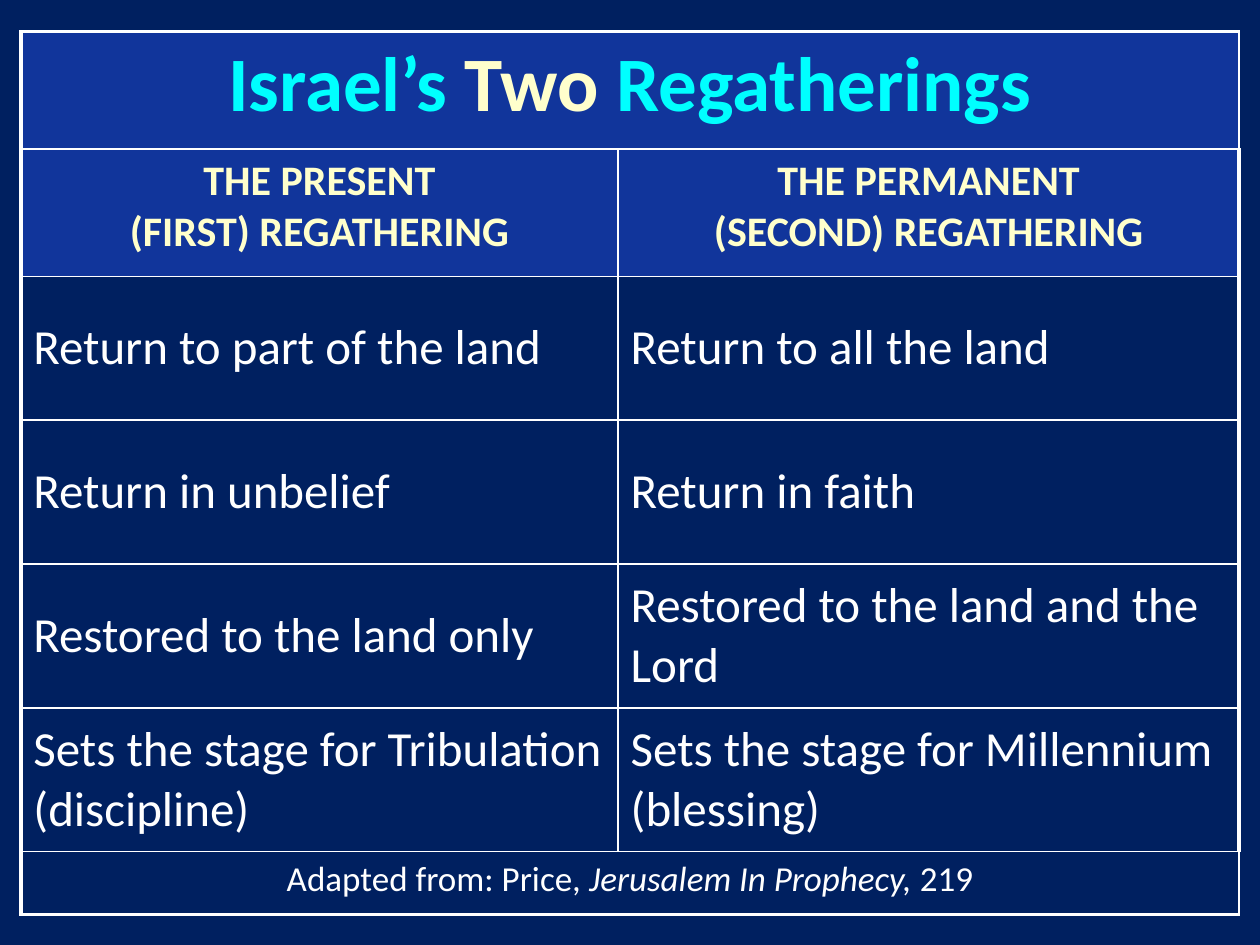
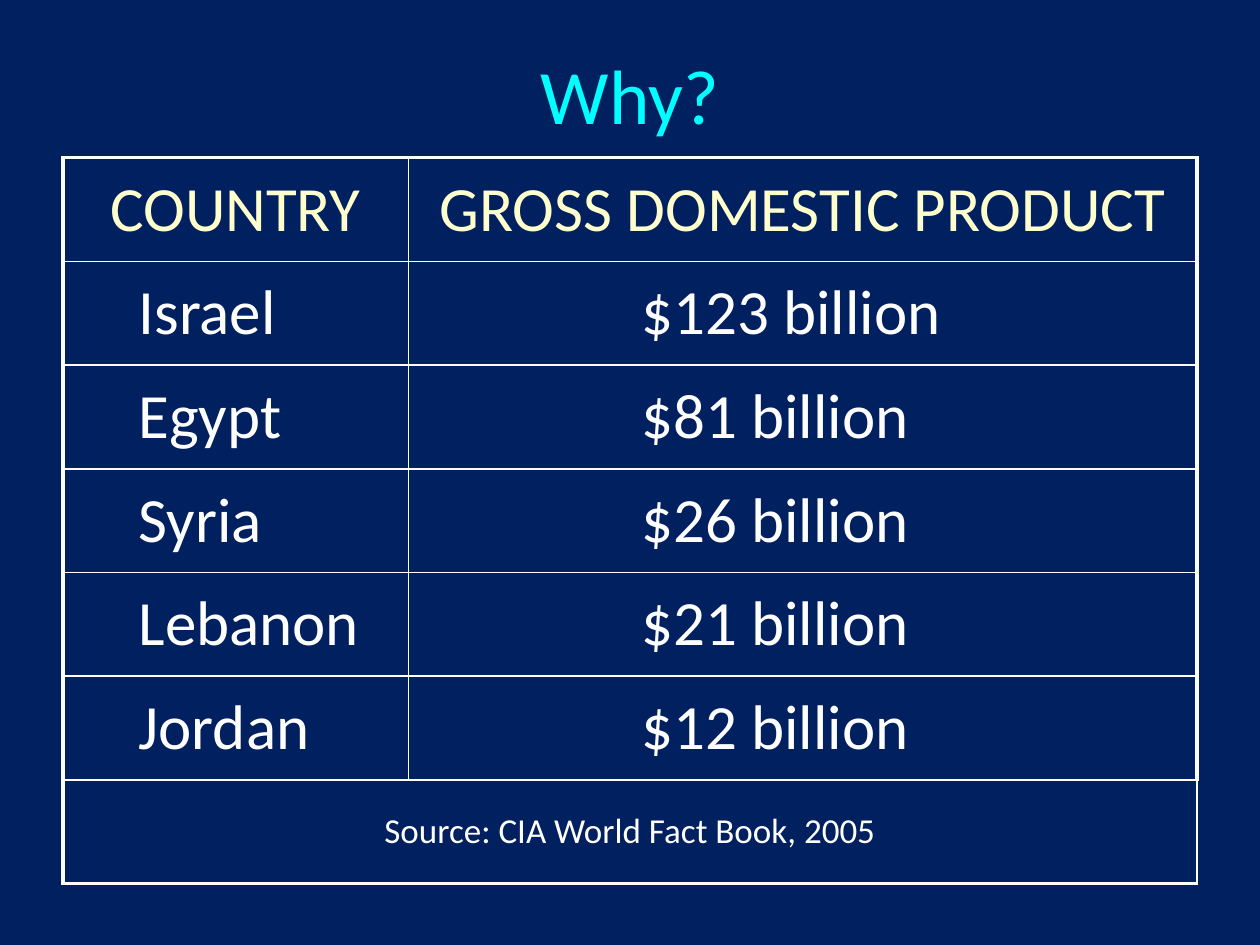
from lxml.etree import SubElement
from pptx import Presentation
from pptx.dml.color import RGBColor
from pptx.enum.text import MSO_ANCHOR, PP_ALIGN
from pptx.oxml.ns import qn
from pptx.util import Cm, Pt

NAVY = RGBColor(0x00, 0x20, 0x60)
BLUE = RGBColor(0x11, 0x35, 0x9B)
AQUA = RGBColor(0x00, 0xFF, 0xFF)
CREAM = RGBColor(0xFF, 0xFF, 0xCC)
WHITE = RGBColor(0xFF, 0xFF, 0xFF)
FONT = "Calibri"
TITLE_SIZE, SOURCE_SIZE = 44, 20
OUTER_LINE, INNER_LINE = Pt(2.25), Pt(1)
TITLE_ONLY_LAYOUT, BLANK_LAYOUT = 5, 6

REGATHERINGS = [
    ("Return to part of the land", "Return to all the land"),
    ("Return in unbelief", "Return in faith"),
    ("Restored to the land only", "Restored to the land and the Lord"),
    ("Sets the stage for Tribulation (discipline)",
     "Sets the stage for Millennium (blessing)"),
]
PRODUCTS = [
    ("Israel", "$123 billion"),
    ("Egypt", "$81 billion"),
    ("Syria", "$26 billion"),
    ("Lebanon", "$21 billion"),
    ("Jordan", "$12 billion"),
]


def style_span(span, size, color, bold=False, italic=False):
    font = span.font
    font.name, font.size = FONT, Pt(size)
    font.bold, font.italic = bold, italic
    font.color.rgb = color


def draw_borders(table):
    last_row, last_column = len(table.rows) - 1, len(table.columns) - 1
    for row in range(last_row + 1):
        for column in range(last_column + 1):
            properties = table.cell(row, column)._tc.get_or_add_tcPr()
            edges = {"a:lnL": column == 0, "a:lnR": column == last_column,
                     "a:lnT": row == 0, "a:lnB": row == last_row}
            for edge, is_outer in edges.items():
                width = OUTER_LINE if is_outer else INNER_LINE
                line = SubElement(properties, qn(edge), w=str(int(width)))
                fill = SubElement(line, qn("a:solidFill"))
                SubElement(fill, qn("a:srgbClr"), val=str(WHITE))


def add_grid(page, left, top, widths, heights, merged_rows):
    table = page.shapes.add_table(len(heights), len(widths), Cm(left), Cm(top),
                                  Cm(sum(widths)), Cm(sum(heights))).table
    table.first_row = table.horz_banding = False
    for column, width in zip(table.columns, widths):
        column.width = Cm(width)
    for row, height in zip(table.rows, heights):
        row.height = Cm(height)
    draw_borders(table)
    for cell in table.iter_cells():
        cell.fill.background()
    for row in merged_rows:
        table.cell(row, 0).merge(table.cell(row, len(widths) - 1))
    return table


def fill_cell(cell, text, size, color=WHITE, bold=False, align=PP_ALIGN.CENTER,
              anchor=MSO_ANCHOR.MIDDLE, indent=0):
    cell.vertical_anchor = anchor
    cell.text_frame.text = text
    for para in cell.text_frame.paragraphs:
        para.alignment = align
        if indent:
            para._p.get_or_add_pPr().set("marL", str(int(Cm(indent))))
        for span in para.runs:
            style_span(span, size, color, bold)


def fill_mixed_cell(cell, size, parts, bold=False):
    para = cell.text_frame.paragraphs[0]
    para.alignment = PP_ALIGN.CENTER
    for text, color, italic in parts:
        span = para.add_run()
        span.text = text
        style_span(span, size, color, bold, italic)


def shade_row(table, row):
    for column in range(len(table.columns)):
        fill = table.cell(row, column).fill
        fill.solid()
        fill.fore_color.rgb = BLUE


def add_title(page, text):
    title = page.shapes.title
    title.left, title.top, title.width, title.height = Cm(1.9), Cm(0.84), Cm(21.6), Cm(2.1)
    title.text_frame.text = text
    title.text_frame.vertical_anchor = MSO_ANCHOR.MIDDLE
    para = title.text_frame.paragraphs[0]
    para.alignment = PP_ALIGN.CENTER
    style_span(para.runs[0], TITLE_SIZE, AQUA)


def add_regatherings_page(deck):
    page = deck.slides.add_slide(deck.slide_layouts[BLANK_LAYOUT])
    heights = [2.36, 2.57] + [2.9] * len(REGATHERINGS) + [1.27]
    source_row = len(heights) - 1
    table = add_grid(page, 0.42, 0.64, [12.04, 12.52], heights, [0, source_row])
    shade_row(table, 0)
    shade_row(table, 1)
    fill_mixed_cell(table.cell(0, 0), TITLE_SIZE, [
        ("Israel’s ", AQUA, False), ("Two ", CREAM, False),
        ("Regatherings", AQUA, False)], bold=True)
    headings = ("THE PRESENT\n(FIRST) REGATHERING",
                "THE PERMANENT\n(SECOND) REGATHERING")
    for column, heading in enumerate(headings):
        fill_cell(table.cell(1, column), heading, 24, CREAM, bold=True,
                  anchor=MSO_ANCHOR.TOP)
    for row, texts in enumerate(REGATHERINGS, start=2):
        for column, text in enumerate(texts):
            fill_cell(table.cell(row, column), text, 28, align=PP_ALIGN.LEFT)
    fill_mixed_cell(table.cell(source_row, 0), SOURCE_SIZE, [
        ("Adapted from: Price, ", WHITE, False),
        ("Jerusalem In Prophecy, ", WHITE, True), ("219", WHITE, False)])


def add_products_page(deck):
    page = deck.slides.add_slide(deck.slide_layouts[TITLE_ONLY_LAYOUT])
    add_title(page, "Why?")
    source_row = len(PRODUCTS) + 1
    heights = [2.09] * (source_row + 1)
    table = add_grid(page, 1.27, 3.18, [6.96, 15.9], heights, [source_row])
    for column, heading in enumerate(("COUNTRY", "GROSS DOMESTIC PRODUCT")):
        fill_cell(table.cell(0, column), heading, 36, CREAM)
    for row, texts in enumerate(PRODUCTS, start=1):
        for column, (text, indent) in enumerate(zip(texts, (1.27, 4.45))):
            fill_cell(table.cell(row, column), text, 36,
                      align=PP_ALIGN.LEFT, indent=indent)
    fill_cell(table.cell(source_row, 0), "Source: CIA World Fact Book, 2005", SOURCE_SIZE)


def main():
    deck = Presentation()
    deck.slide_width, deck.slide_height = Cm(25.4), Cm(19.05)
    background = deck.slide_master.background.fill
    background.solid()
    background.fore_color.rgb = NAVY
    add_regatherings_page(deck)
    add_products_page(deck)
    deck.save("out.pptx")


if __name__ == "__main__":
    main()
